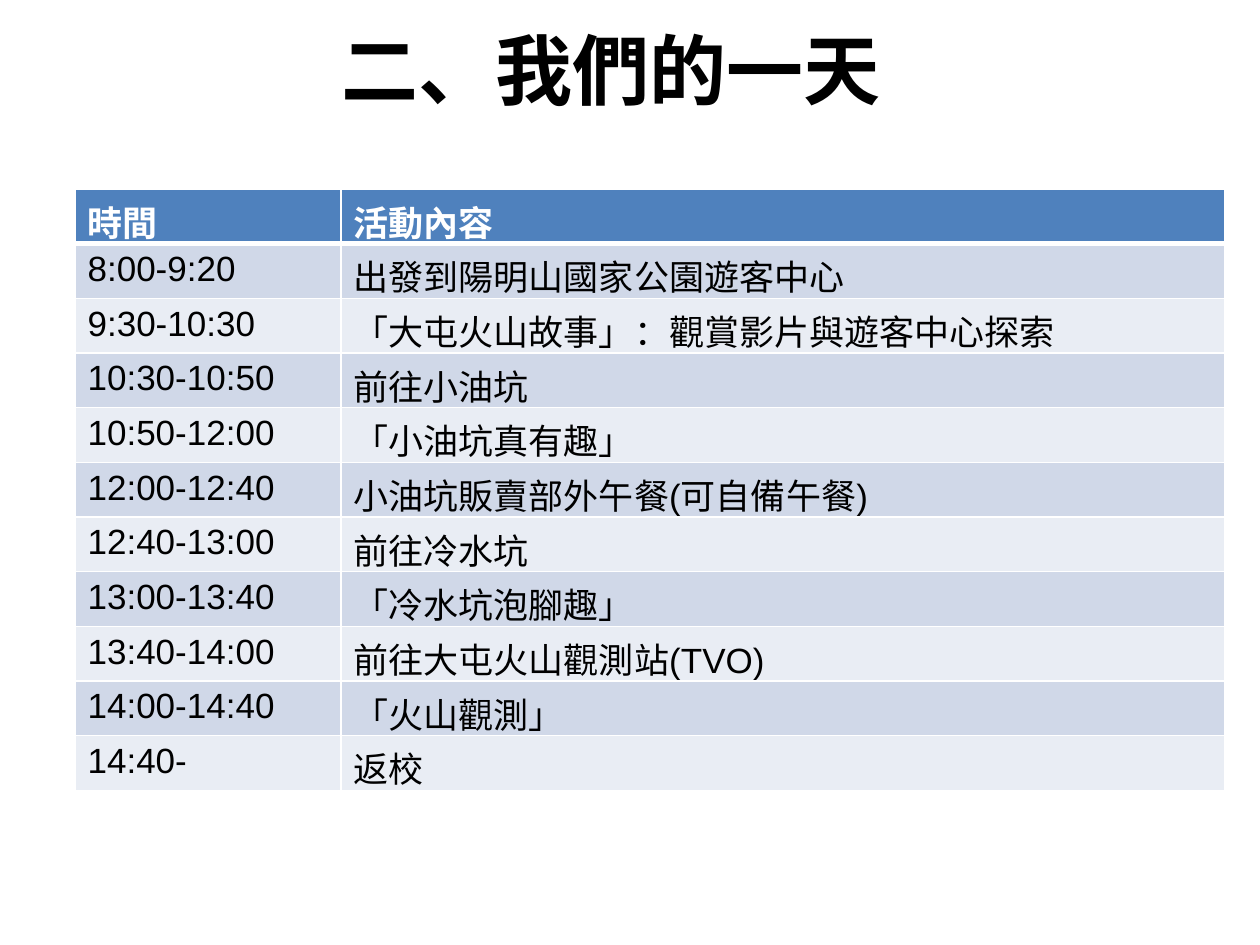
from lxml.etree import SubElement
from pptx import Presentation
from pptx.dml.color import RGBColor
from pptx.enum.text import MSO_ANCHOR, PP_ALIGN
from pptx.oxml.ns import qn
from pptx.util import Emu, Pt

TITLE = "二、我們的一天"
ROWS = [
    ("時間", "活動內容"),
    ("8:00-9:20", "出發到陽明山國家公園遊客中心"),
    ("9:30-10:30", "「大屯火山故事」：觀賞影片與遊客中心探索"),
    ("10:30-10:50", "前往小油坑"),
    ("10:50-12:00", "「小油坑真有趣」"),
    ("12:00-12:40", "小油坑販賣部外午餐(可自備午餐)"),
    ("12:40-13:00", "前往冷水坑"),
    ("13:00-13:40", "「冷水坑泡腳趣」"),
    ("13:40-14:00", "前往大屯火山觀測站(TVO)"),
    ("14:00-14:40", "「火山觀測」"),
    ("14:40-", "返校"),
]
COLS = (266, 884)
HEAD, BODY, TALL = 49, 52, 601
COLORS = {"head": "4F81BD", "odd": "D0D8E8", "even": "E9EDF4",
          "white": "FFFFFF", "black": "000000"}
LATIN, CJK = "Arial", "Noto Sans CJK SC"


def px(n):
    return Emu(n * 914400 // 126)


def color(name):
    return RGBColor.from_string(COLORS[name])


def style(para, size, face, ink, bold):
    for run in para.runs:
        font = run.font
        font.size, font.name, font.bold = Pt(size), face, bold
        font.color.rgb = color(ink)
        SubElement(run._r.get_or_add_rPr(), qn("a:ea"), typeface=CJK)


def border(cell, low):
    props = cell._tc.get_or_add_tcPr()
    widths = {"lnL": 1, "lnR": 1, "lnT": 1, "lnB": low}
    for i, (tag, width) in enumerate(widths.items()):
        line = props.makeelement(qn("a:" + tag), {"w": str(Pt(width))})
        fill = SubElement(line, qn("a:solidFill"))
        SubElement(fill, qn("a:srgbClr"), val=COLORS["white"])
        props.insert(i, line)  # borders come before the fill


prs = Presentation()
prs.slide_width, prs.slide_height = px(1260), px(945)
slide = prs.slides.add_slide(prs.slide_layouts[6])

# Title
box = slide.shapes.add_textbox(px(44), px(16), px(1134), px(106))
frame = box.text_frame
frame.word_wrap = True
frame.vertical_anchor = MSO_ANCHOR.MIDDLE
frame.text = TITLE
frame.paragraphs[0].alignment = PP_ALIGN.CENTER
style(frame.paragraphs[0], 44, CJK, "black", True)

# Timetable
holder = slide.shapes.add_table(len(ROWS), len(COLS), px(75), px(189),
                                px(sum(COLS)), px(TALL))
table = holder.table
for col, width in zip(table.columns, COLS):
    col.width = px(width)
for r, texts in enumerate(ROWS):
    head = r == 0
    table.rows[r].height = px(HEAD if head else BODY)
    shade = "head" if head else "odd" if r % 2 else "even"
    for c, text in enumerate(texts):
        cell = table.cell(r, c)
        cell.text_frame.text = text
        style(cell.text_frame.paragraphs[0], 20, LATIN,
              "white" if head else "black", head)
        cell.fill.solid()
        cell.fill.fore_color.rgb = color(shade)
        border(cell, 3 if r == 0 else 1)
        if r == 1:
            cell._tc.tcPr.find(qn("a:lnT")).set("w", str(Pt(3)))
holder.height = px(TALL)

prs.save("out.pptx")
